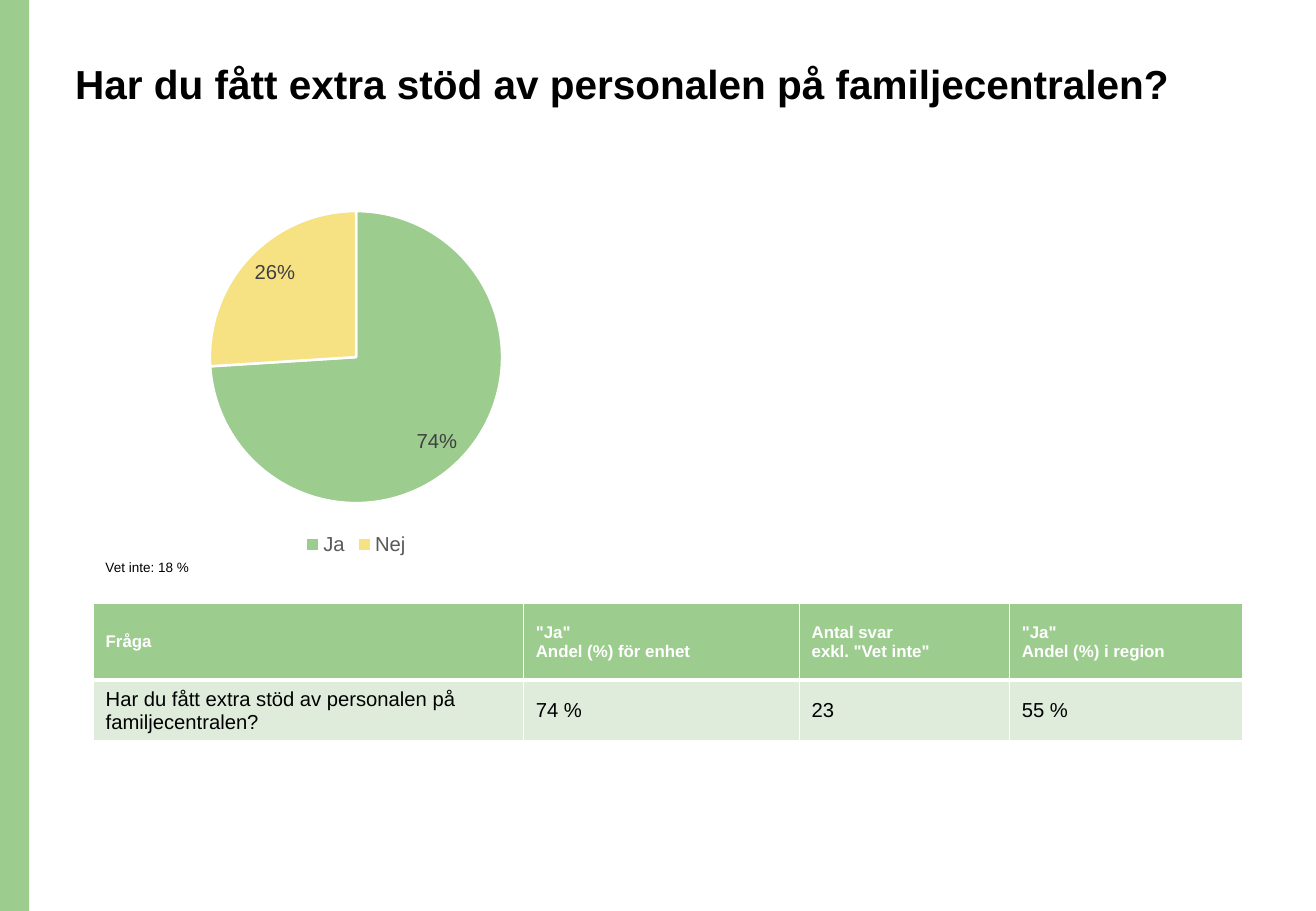
from lxml import etree
from pptx import Presentation
from pptx.chart.data import CategoryChartData
from pptx.dml.color import RGBColor
from pptx.enum.chart import XL_CHART_TYPE, XL_LABEL_POSITION, XL_LEGEND_POSITION
from pptx.enum.shapes import MSO_SHAPE
from pptx.enum.text import MSO_ANCHOR
from pptx.oxml.ns import qn
from pptx.util import Inches, Pt

PIE = XL_CHART_TYPE.PIE
INSIDE_END = XL_LABEL_POSITION.INSIDE_END
BOTTOM = XL_LEGEND_POSITION.BOTTOM
RECTANGLE = MSO_SHAPE.RECTANGLE
MIDDLE = MSO_ANCHOR.MIDDLE

FONT = "Arial"
GREEN, YELLOW, PALE_GREEN = "9DCC8F", "F6E183", "DFECDB"
BLACK, WHITE = "000000", "FFFFFF"
QUESTION = "Har du fått extra stöd av personalen på familjecentralen?"

ANSWERS = [("Ja", 0.74, GREEN), ("Nej", 0.26, YELLOW)]
COLUMN_WIDTHS = [3.54, 2.27, 1.73, 1.92]
ROW_HEIGHTS = [0.63, 0.47]
HEADER = [
    ["Fråga"],
    ['"Ja"', "Andel (%) för enhet"],
    ["Antal svar", 'exkl. "Vet inte"'],
    ['"Ja"', "Andel (%) i region"],
]
RESULT = [[QUESTION], ["74 %"], ["23"], ["55 %"]]


def color(hex_code):
    return RGBColor.from_string(hex_code)


def set_fill(target, hex_code):
    target.fill.solid()
    target.fill.fore_color.rgb = color(hex_code)


def set_font(font, size, hex_code, bold=False):
    font.name = FONT
    font.size = Pt(size)
    font.bold = bold
    font.color.rgb = color(hex_code)


def write_lines(frame, lines, size, hex_code, bold=False, spacing=None):
    frame.word_wrap = True
    for index, line in enumerate(lines):
        paragraph = frame.add_paragraph() if index else frame.paragraphs[0]
        if spacing:
            paragraph.line_spacing = spacing
        run = paragraph.add_run()
        run.text = line
        set_font(run.font, size, hex_code, bold)


def add_text(slide, box, text, size, bold=False, spacing=None):
    textbox = slide.shapes.add_textbox(*map(Inches, box))
    write_lines(textbox.text_frame, [text], size, BLACK, bold, spacing)


def add_side_band(slide):
    band = slide.shapes.add_shape(RECTANGLE, 0, 0, Inches(0.24), Inches(7.5))
    band.shadow.inherit = False
    set_fill(band, GREEN)
    band.line.fill.background()


def add_answer_pie(slide):
    data = CategoryChartData(number_format="0%")
    data.categories = [answer for answer, _, _ in ANSWERS]
    data.add_series("Andel", [share for _, share, _ in ANSWERS])
    box = map(Inches, (1.22, 1.6, 3.42, 3.01))
    chart = slide.shapes.add_chart(PIE, *box, data).chart
    chart.has_title = False
    set_font(chart.font, 10, BLACK)

    # Legend below the pie
    chart.has_legend = True
    chart.legend.position = BOTTOM
    chart.legend.include_in_layout = False
    set_font(chart.legend.font, 12, "595959")

    # Slices and their labels
    plot = chart.plots[0]
    plot.vary_by_categories = True
    for index, (_, _, slice_color) in enumerate(ANSWERS):
        pie_slice = plot.series[0].points[index].format
        set_fill(pie_slice, slice_color)
        pie_slice.line.color.rgb = color(WHITE)
        pie_slice.line.width = Pt(1.5)
    labels = plot.series[0].data_labels
    labels.show_value = True
    labels.number_format = "0%"
    labels.number_format_is_linked = False
    labels.position = INSIDE_END
    set_font(labels.font, 12, "404040")


def set_borders(cell, widths):
    properties = cell._tc.get_or_add_tcPr()
    for index, (side, width) in enumerate(widths.items()):
        line = etree.Element(qn(f"a:ln{side}"), w=str(Pt(width)))
        fill = etree.SubElement(line, qn("a:solidFill"))
        etree.SubElement(fill, qn("a:srgbClr"), val=WHITE)
        properties.insert(index, line)


def fill_row(table, row, texts, fill, borders, **style):
    for column, lines in enumerate(texts):
        cell = table.cell(row, column)
        cell.vertical_anchor = MIDDLE
        set_fill(cell, fill)
        set_borders(cell, borders)
        write_lines(cell.text_frame, lines, **style)


def add_result_table(slide):
    box = (0.77, 4.97, sum(COLUMN_WIDTHS), sum(ROW_HEIGHTS))
    frame = slide.shapes.add_table(
        len(ROW_HEIGHTS), len(COLUMN_WIDTHS), *map(Inches, box))
    table = frame.table
    for column, width in zip(table.columns, COLUMN_WIDTHS):
        column.width = Inches(width)
    for row, height in zip(table.rows, ROW_HEIGHTS):
        row.height = Inches(height)
    fill_row(table, 0, HEADER, GREEN, {"L": 1, "R": 1, "T": 1, "B": 3},
             size=10, hex_code=WHITE, bold=True)
    fill_row(table, 1, RESULT, PALE_GREEN, {"L": 1, "R": 1, "T": 3, "B": 1},
             size=12, hex_code=BLACK)


def main():
    presentation = Presentation()
    presentation.slide_width = Inches(10.83)
    presentation.slide_height = Inches(7.5)
    slide = presentation.slides.add_slide(presentation.slide_layouts[6])

    add_side_band(slide)
    add_text(slide, (0.52, 0.48, 9.34, 1.02), QUESTION, 24, bold=True, spacing=0.9)
    add_answer_pie(slide)
    add_result_table(slide)
    add_text(slide, (0.77, 4.49, 2.1, 0.48), "Vet inte: 18 %", 8, spacing=1.5)

    presentation.save("out.pptx")


if __name__ == "__main__":
    main()
